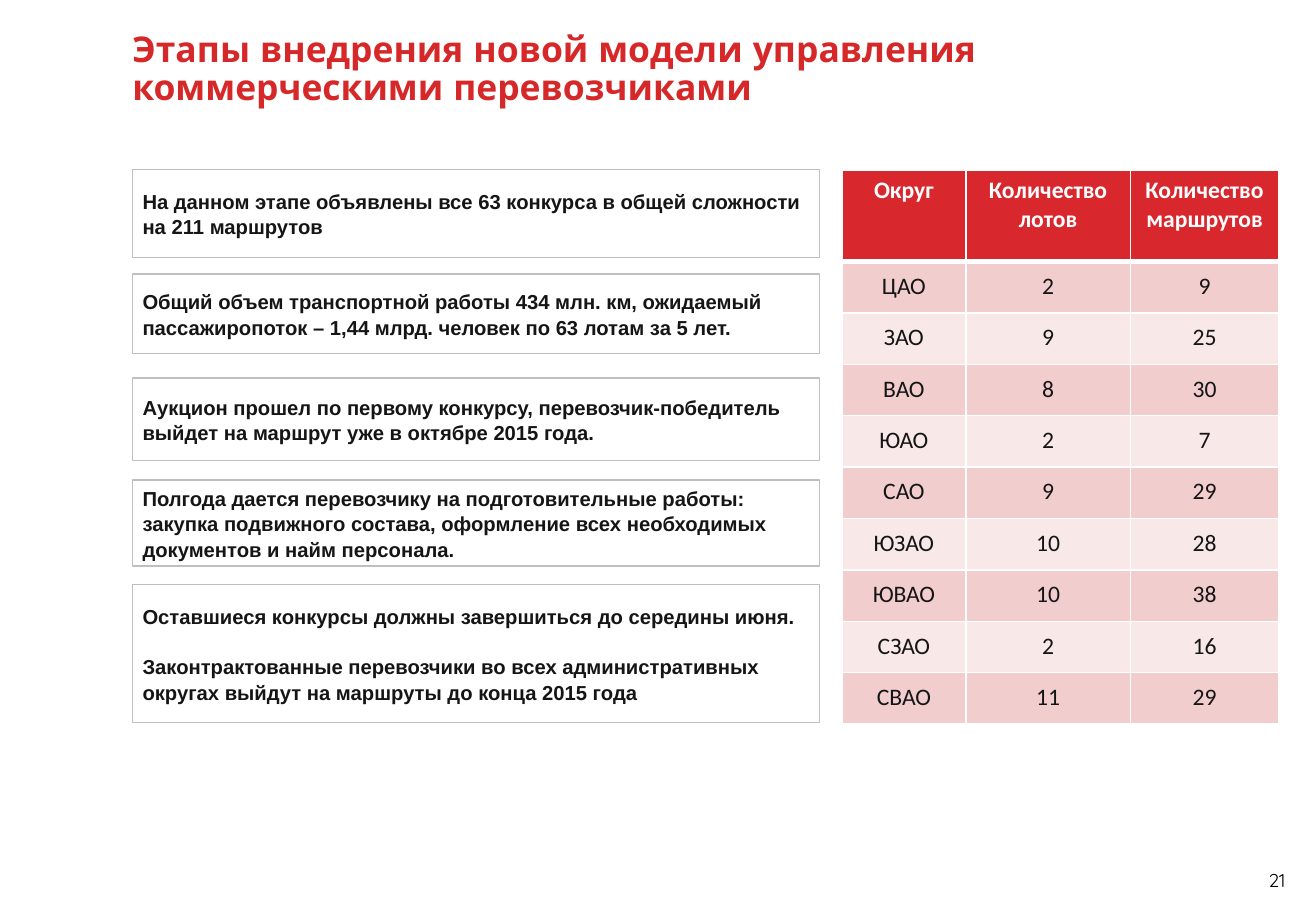
from typing import NamedTuple

from lxml import etree
from pptx import Presentation
from pptx import util as u
from pptx.dml.color import RGBColor
from pptx.enum import shapes, text
from pptx.oxml.ns import qn

RED_TITLE = RGBColor(0xD6, 0x28, 0x28)
RED_HEADER = RGBColor(0xD9, 0x27, 0x2E)
PINK = RGBColor(0xF1, 0xCD, 0xCD)
PALE_PINK = RGBColor(0xF8, 0xE8, 0xE8)
GREY_LINE = RGBColor(0xBF, 0xBF, 0xBF)
INK = RGBColor(0x15, 0x15, 0x15)
BLACK = RGBColor(0, 0, 0)
WHITE = RGBColor(0xFF, 0xFF, 0xFF)

LEFT = 78.5
STAGE_WIDTH = 407.5
TABLE_LEFT, TABLE_TOP = 499, 101
COLUMN_WIDTHS = (73.5, 97.5, 88)
HEADER_HEIGHT, ROW_HEIGHT = 54, 30.5


class Style(NamedTuple):
    font: str
    size: float
    color: RGBColor
    bold: bool = False


class Stage(NamedTuple):
    top: float
    height: float
    paragraphs: tuple[str, ...]


class District(NamedTuple):
    name: str
    lots: int
    routes: int


TITLE_STYLE = Style("Quicksand", 21, RED_TITLE, True)
NUMBER_STYLE = Style("Quicksand", 11, BLACK)
STAGE_STYLE = Style("Arial", 12, INK, True)
HEADER_STYLE = Style("Calibri", 14, WHITE, True)
CELL_STYLE = Style("Calibri", 14, INK)

STAGES = (
    Stage(100.5, 52, ("На данном этапе объявлены все 63 конкурса в общей сложности на 211 маршрутов",)),
    Stage(162.5, 47, ("Общий объем транспортной работы 434 млн. км, ожидаемый пассажиропоток "
                      "– 1,44 млрд. человек по 63 лотам за 5 лет.",)),
    Stage(224, 49, ("Аукцион прошел по первому конкурсу, перевозчик-победитель "
                    "выйдет на маршрут уже в октябре 2015 года.",)),
    Stage(284.5, 51, ("Полгода дается перевозчику на подготовительные работы: закупка подвижного "
                      "состава, оформление всех необходимых документов и найм персонала.",)),
    Stage(346.5, 82, ("Оставшиеся конкурсы должны завершиться до середины июня.",
                      "Законтрактованные перевозчики во всех административных округах "
                      "выйдут на маршруты до конца 2015 года")),
)

HEADERS = ("Округ", "Количество лотов", "Количество маршрутов")
DISTRICTS = (
    District("ЦАО", 2, 9),
    District("ЗАО", 9, 25),
    District("ВАО", 8, 30),
    District("ЮАО", 2, 7),
    District("САО", 9, 29),
    District("ЮЗАО", 10, 28),
    District("ЮВАО", 10, 38),
    District("СЗАО", 2, 16),
    District("СВАО", 11, 29),
)


def add_run(paragraph, words: str, style: Style) -> None:
    run = paragraph.add_run()
    run.text = words
    run.font.name = style.font
    run.font.size = u.Pt(style.size)
    run.font.bold = style.bold
    run.font.color.rgb = style.color


def set_margins(frame, margin: float) -> None:
    frame.margin_left = frame.margin_right = u.Pt(margin)
    frame.margin_top = frame.margin_bottom = u.Pt(margin)


def add_title(slide) -> None:
    box = slide.shapes.add_textbox(u.Pt(LEFT), u.Pt(19), u.Pt(669.5), u.Pt(51))
    frame = box.text_frame
    frame.word_wrap = True
    set_margins(frame, 0)
    paragraph = frame.paragraphs[0]
    paragraph.line_spacing = 0.9
    add_run(paragraph, "Этапы внедрения новой модели управления коммерческими перевозчиками", TITLE_STYLE)


def add_page_number(slide) -> None:
    box = slide.shapes.add_textbox(u.Pt(749), u.Pt(512.5), u.Pt(19.5), u.Pt(19))
    frame = box.text_frame
    frame.word_wrap = False
    frame.vertical_anchor = text.MSO_ANCHOR.MIDDLE
    set_margins(frame, 3)
    add_run(frame.paragraphs[0], "21", NUMBER_STYLE)


def add_stage(slide, stage: Stage) -> None:
    shape = slide.shapes.add_shape(
        shapes.MSO_SHAPE.RECTANGLE,
        u.Pt(LEFT), u.Pt(stage.top), u.Pt(STAGE_WIDTH), u.Pt(stage.height))
    shape.shadow.inherit = False
    shape.fill.solid()
    shape.fill.fore_color.rgb = WHITE
    shape.line.color.rgb = GREY_LINE
    shape.line.width = u.Pt(0.75)
    frame = shape.text_frame
    frame.word_wrap = True
    frame.vertical_anchor = text.MSO_ANCHOR.MIDDLE
    set_margins(frame, 6)
    for index, words in enumerate(stage.paragraphs):
        paragraph = frame.add_paragraph() if index else frame.paragraphs[0]
        paragraph.alignment = text.PP_ALIGN.LEFT
        paragraph.line_spacing = 1.05
        if index:
            paragraph.space_before = u.Pt(14.5)
        add_run(paragraph, words, STAGE_STYLE)


def add_borders(cell, bottom_width: float) -> None:
    """Give the cell white borders, 1 pt except at the bottom."""
    properties = cell._tc.get_or_add_tcPr()
    for side, width in (("L", 1), ("R", 1), ("T", 1), ("B", bottom_width)):
        line = etree.SubElement(properties, qn(f"a:ln{side}"), w=str(u.Pt(width)))
        fill = etree.SubElement(line, qn("a:solidFill"))
        etree.SubElement(fill, qn("a:srgbClr"), val=str(WHITE))


def fill_cell(cell, words: str, style: Style, color: RGBColor,
              spacing: float, bottom_width: float) -> None:
    add_borders(cell, bottom_width)
    cell.fill.solid()
    cell.fill.fore_color.rgb = color
    paragraph = cell.text_frame.paragraphs[0]
    paragraph.alignment = text.PP_ALIGN.CENTER
    paragraph.line_spacing = spacing
    add_run(paragraph, words, style)


def add_district_table(slide) -> None:
    row_count = len(DISTRICTS) + 1
    table = slide.shapes.add_table(
        row_count, len(HEADERS), u.Pt(TABLE_LEFT), u.Pt(TABLE_TOP),
        u.Pt(sum(COLUMN_WIDTHS)), u.Pt(HEADER_HEIGHT + ROW_HEIGHT * len(DISTRICTS))).table
    table.horz_banding = False
    for column, width in zip(table.columns, COLUMN_WIDTHS):
        column.width = u.Pt(width)
    for index, row in enumerate(table.rows):
        row.height = u.Pt(ROW_HEIGHT if index else HEADER_HEIGHT)
    for column, header in enumerate(HEADERS):
        fill_cell(table.cell(0, column), header, HEADER_STYLE, RED_HEADER, 1.0, 3)
    for row, district in enumerate(DISTRICTS, start=1):
        color = PINK if row % 2 else PALE_PINK
        for column, value in enumerate(district):
            fill_cell(table.cell(row, column), str(value), CELL_STYLE, color, 1.15, 1)


def main() -> None:
    presentation = Presentation()
    presentation.slide_width = u.Pt(780)
    presentation.slide_height = u.Pt(540)
    slide = presentation.slides.add_slide(presentation.slide_layouts[6])
    add_page_number(slide)
    add_title(slide)
    for stage in STAGES:
        add_stage(slide, stage)
    add_district_table(slide)
    presentation.save("out.pptx")


if __name__ == "__main__":
    main()
